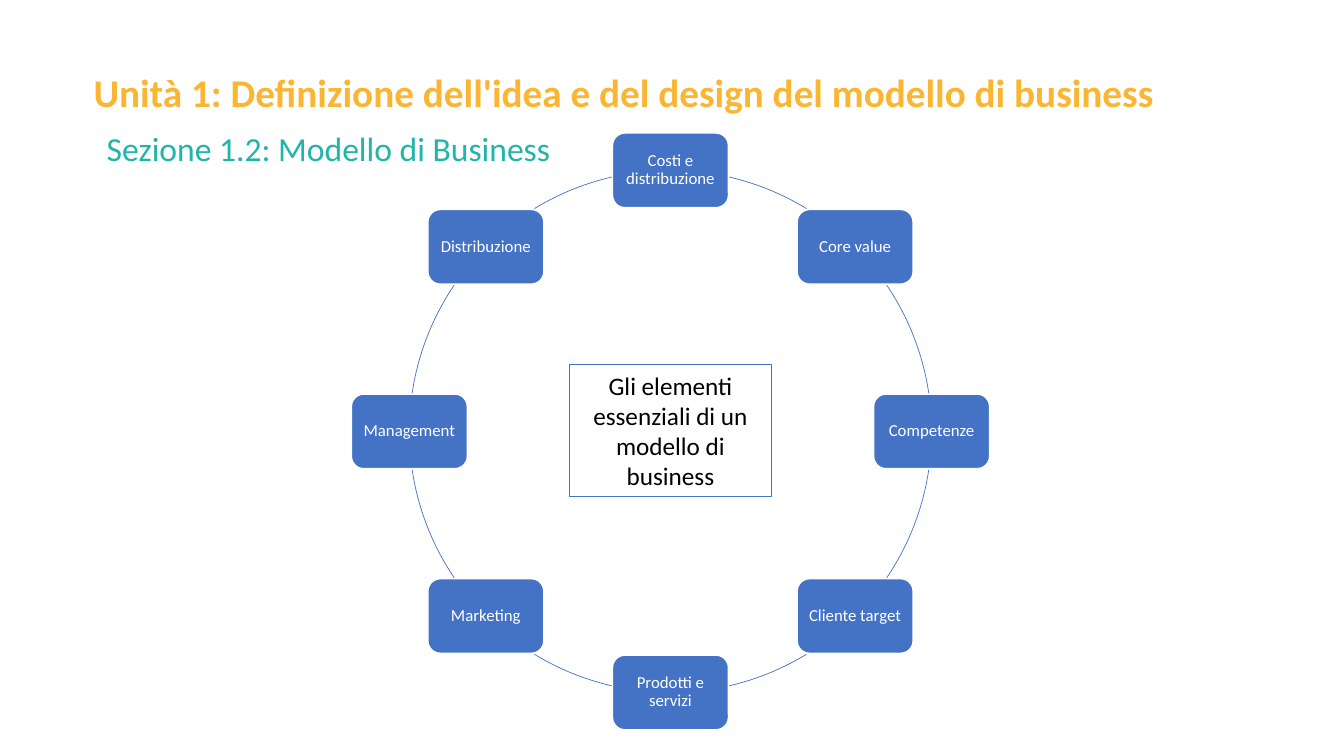
from dataclasses import dataclass
from math import cos, radians, sin

from pptx import Presentation
from pptx.dml.color import RGBColor as Color
from pptx.enum.shapes import MSO_SHAPE as Preset
from pptx.enum.text import MSO_ANCHOR as Anchor, MSO_AUTO_SIZE as AutoSize, PP_ALIGN as Align
from pptx.util import Inches, Pt


@dataclass(frozen=True)
class Theme:
    font: str = "Calibri"
    title_color: str = "FAB632"
    section_color: str = "21B4A9"
    cycle_color: str = "4472C4"
    white: str = "FFFFFF"
    black: str = "000000"
    title_size: int = 28
    section_size: int = 24
    center_size: int = 18
    node_size: int = 12


THEME = Theme()

ELEMENTS = ["Costi e distribuzione", "Core value", "Competenze", "Cliente target",
            "Prodotti e servizi", "Marketing", "Management ", "Distribuzione"]
NODE_WIDTH, NODE_HEIGHT = 1.15, 0.74
# Clockwise degrees from the right: visible arcs in half a turn, between the nodes
HALF_TURN_ARCS = [(8.4, 34.1), (58.6, 77), (103, 121.4), (145.9, 171.6)]


def write(shape, text, size, color, bold=False, align=Align.LEFT, spacing=1.0, **frame_format):
    """Put one formatted paragraph in the shape."""
    frame = shape.text_frame
    for name, value in {"word_wrap": True, "vertical_anchor": Anchor.TOP, **frame_format}.items():
        setattr(frame, name, value)
    para = frame.paragraphs[0]
    para.alignment, para.line_spacing = align, spacing
    span = para.add_run()
    span.text = text
    for name, value in {"name": THEME.font, "size": Pt(size), "bold": bold}.items():
        setattr(span.font, name, value)
    span.font.color.rgb = Color.from_string(color)


def add_preset(page, preset, box, line_color, line_width, fill_color=None):
    shape = page.shapes.add_shape(preset, *map(Inches, box))
    shape.shadow.inherit = False
    if fill_color:
        shape.fill.solid()
        shape.fill.fore_color.rgb = Color.from_string(fill_color)
    else:
        shape.fill.background()
    shape.line.color.rgb = Color.from_string(line_color)
    shape.line.width = Pt(line_width)
    return shape


def add_heading(page, box, text, size, color, bold=False):
    heading = page.shapes.add_textbox(*map(Inches, box))
    write(heading, text, size, color, bold, auto_size=AutoSize.SHAPE_TO_FIT_TEXT)


def add_cycle(page, box):
    """Spread the elements clockwise from the top of the circle that fills the box."""
    left, top, diameter, _ = box
    radius = diameter / 2
    for half_turn in (0, 180):
        for ends in HALF_TURN_ARCS:
            arc = add_preset(page, Preset.ARC, box, THEME.cycle_color, 0.5)
            for index, angle in enumerate(ends):
                # Arc adjustments count 60000 units per degree, scaled by 100000
                arc.adjustments[index] = (angle + half_turn) * 0.6

    inset = Inches(0.08)
    margins = {f"margin_{side}": inset for side in ("left", "top", "right", "bottom")}
    for index, element in enumerate(ELEMENTS):
        angle = radians(360 / len(ELEMENTS) * index - 90)
        node_box = (left + radius * (1 + cos(angle)) - NODE_WIDTH / 2,
                    top + radius * (1 + sin(angle)) - NODE_HEIGHT / 2,
                    NODE_WIDTH, NODE_HEIGHT)
        node = add_preset(page, Preset.ROUNDED_RECTANGLE, node_box,
                          THEME.white, 1, THEME.cycle_color)
        write(node, element, THEME.node_size, THEME.white, align=Align.CENTER,
              spacing=0.9, vertical_anchor=Anchor.MIDDLE, **margins)


def add_center(page, box):
    center = add_preset(page, Preset.RECTANGLE, box, THEME.cycle_color, 0.75)
    write(center, "Gli elementi essenziali di un modello di business", THEME.center_size,
          THEME.black, align=Align.CENTER, auto_size=AutoSize.SHAPE_TO_FIT_TEXT)


def main():
    deck = Presentation()
    deck.slide_width, deck.slide_height = Inches(13.33), Inches(7.5)
    page = deck.slides.add_slide(deck.slide_layouts[6])
    add_heading(page, (0.83, 0.63, 11.63, 1.04),
                "Unità 1: Definizione dell'idea e del design del modello di business",
                THEME.title_size, THEME.title_color, bold=True)
    add_cycle(page, (4.06, 1.69, 5.18, 5.18))
    add_center(page, (5.65, 3.62, 2, 1.31))
    add_heading(page, (0.96, 1.22, 8.41, 0.5), "Sezione 1.2: Modello di Business",
                THEME.section_size, THEME.section_color)
    deck.save("out.pptx")


if __name__ == "__main__":
    main()
